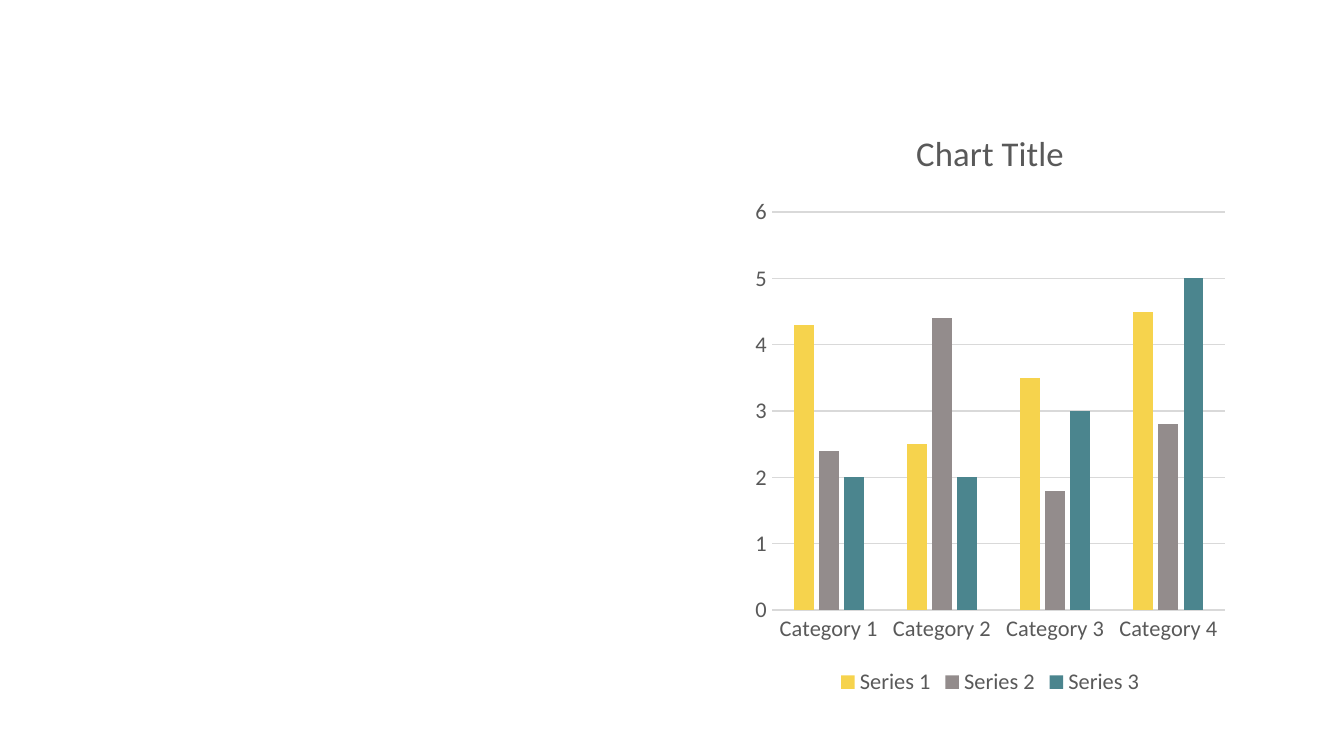
from dataclasses import dataclass

from pptx import Presentation
from pptx.chart.data import CategoryChartData
from pptx.dml.color import RGBColor
from pptx.enum.chart import XL_CHART_TYPE, XL_LEGEND_POSITION, XL_TICK_MARK
from pptx.util import Emu, Pt

SCALE = 6350  # EMU per px, 144 px to the inch


def px(n):
    return Emu(n * SCALE)


@dataclass(frozen=True)
class Theme:
    face: str = "Calibri"
    ink: str = "595959"
    rule: str = "D9D9D9"
    back: str = "FFFFFF"
    bars: tuple = ("F6D34D", "938C8C", "4B858E")
    head: float = 18.6
    label: float = 12
    line: float = 0.75


class Deck:
    def __init__(self, theme, width, height):
        self.theme = theme
        self.show = Presentation()
        self.show.slide_width, self.show.slide_height = px(width), px(height)
        self.slide = self.show.slides.add_slide(self.show.slide_layouts[6])
        self.fill(self.slide.background.fill, theme.back)

    def fill(self, fill, color):
        fill.solid()
        fill.fore_color.rgb = RGBColor.from_string(color)

    def font(self, font, size):
        font.name, font.size, font.bold = self.theme.face, Pt(size), False
        font.color.rgb = RGBColor.from_string(self.theme.ink)

    def stroke(self, line):
        line.width = Pt(self.theme.line)
        line.color.rgb = RGBColor.from_string(self.theme.rule)

    def columns(self, box, title, names, rows):
        theme = self.theme
        data = CategoryChartData()
        data.categories = names
        for name, values in rows.items():
            data.add_series(name, values)
        chart = self.slide.shapes.add_chart(
            XL_CHART_TYPE.COLUMN_CLUSTERED, *map(px, box), data).chart
        self.font(chart.font, theme.label)

        # Title
        chart.has_title = True
        frame = chart.chart_title.text_frame
        frame.text = title
        self.font(frame.paragraphs[0].font, theme.head)
        chart.chart_title.include_in_layout = False

        # Columns
        plot = chart.plots[0]
        plot.vary_by_categories = False
        plot.gap_width, plot.overlap = 219, -27
        for series, color in zip(plot.series, theme.bars):
            self.fill(series.format.fill, color)

        # Axes
        for axis in (chart.category_axis, chart.value_axis):
            axis.major_tick_mark = axis.minor_tick_mark = XL_TICK_MARK.NONE
            self.font(axis.tick_labels.font, theme.label)
        self.stroke(chart.category_axis.format.line)
        scale = chart.value_axis
        scale.format.line.fill.background()
        scale.minimum_scale, scale.maximum_scale, scale.major_unit = 0, 6, 1
        scale.has_major_gridlines = True
        self.stroke(scale.major_gridlines.format.line)

        # Legend
        chart.has_legend = True
        chart.legend.position = XL_LEGEND_POSITION.BOTTOM
        chart.legend.include_in_layout = False
        self.font(chart.legend.font, theme.label)


def main():
    deck = Deck(Theme(), 1440, 810)
    deck.columns(
        (799, 111, 524, 640), "Chart Title",
        [f"Category {n}" for n in range(1, 5)],
        {
            "Series 1": (4.3, 2.5, 3.5, 4.5),
            "Series 2": (2.4, 4.4, 1.8, 2.8),
            "Series 3": (2, 2, 3, 5),
        })
    deck.show.save("out.pptx")


if __name__ == "__main__":
    main()
